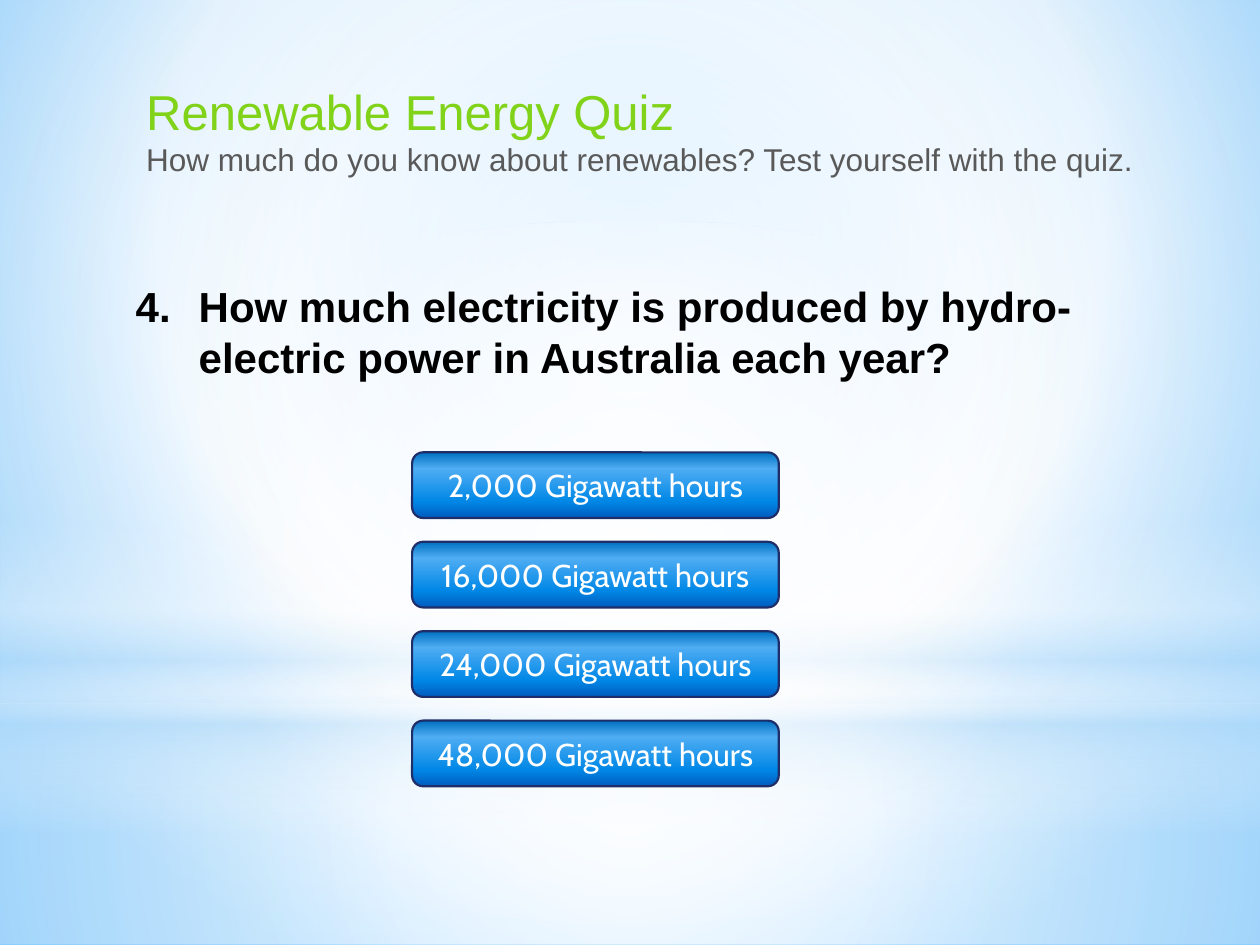
"""Build the hydro-electric question slide of the renewable energy quiz."""
import pptx
import pptx.dml.color
import pptx.enum.shapes
import pptx.enum.text
import pptx.oxml
import pptx.oxml.ns
import pptx.util

Pt = pptx.util.Pt
SHAPES = pptx.enum.shapes.MSO_SHAPE
ALIGN = pptx.enum.text.PP_ALIGN
ANCHOR = pptx.enum.text.MSO_ANCHOR
FIT = pptx.enum.text.MSO_AUTO_SIZE

THEME = {
    "title": {"name": "Arial", "size": Pt(28), "color": "81D31A"},
    "subtitle": {"name": "Arial", "size": Pt(18), "color": "595959"},
    "question": {"name": "Arial", "size": Pt(24), "color": "000000", "bold": True},
    "answer": {"name": "Cabin", "size": Pt(18), "color": "FFFFFF"},
    "outline": "1F2E69",
    "sky": [(0, "9ED5FF", 100), (60, "FFFFFF", 100), (100, "5BB9FF", 100)],
    "ground": [(0, "FFFFFF", 91), (37, "FFFFFF", 76), (100, "B4DCFA", 79)],
    "air": [(0, "FFFFFF", 89), (48, "FFFFFF", 62), (100, "B4DCFA", 79)],
    "horizon": [(0, "FFFFFF", 0), (29, "FFFFFF", 30), (45, "B4DCFA", 40),
                (55, "FFFFFF", 26), (65, "B4DCFA", 60), (100, "FFFFFF", 0)],
    "glow": [(0, "FFFFFF", 100), (56, "FFFFFF", 0)],
    "button": [(0, "0070C0", 100), (25, "4FADF3", 100),
               (75, "0087E6", 100), (100, "005CBF", 100)],
}


def apply_gradient(fill, element, stops, focus=None):
    """Fill with stops, radially towards focus or else from top to bottom."""
    fill.gradient()
    gradient = element.find(".//" + pptx.oxml.ns.qn("a:gradFill"))
    stop_xml = "".join(
        f'<a:gs pos="{position * 1000}"><a:srgbClr val="{color}">'
        f'<a:alpha val="{opacity * 1000}"/></a:srgbClr></a:gs>'
        for position, color, opacity in stops)
    direction = '<a:lin ang="5400000" scaled="0"/>'
    if focus:
        edges = " ".join(f'{side}="{value * 1000}"' for side, value in zip("ltrb", focus))
        direction = f'<a:path path="circle"><a:fillToRect {edges}/></a:path>'
    gradient.getparent().replace(gradient, pptx.oxml.parse_xml(
        f'<a:gradFill {pptx.oxml.ns.nsdecls("a")} rotWithShape="1">'
        f'<a:gsLst>{stop_xml}</a:gsLst>{direction}</a:gradFill>'))


def write(paragraph, text, style):
    """Add text to a paragraph in one of the theme's type styles."""
    run = paragraph.add_run()
    run.text = text
    for attribute, value in THEME[style].items():
        if attribute == "color":
            run.font.color.rgb = pptx.dml.color.RGBColor.from_string(value)
        else:
            setattr(run.font, attribute, value)


presentation = pptx.Presentation()
presentation.slide_width, presentation.slide_height = Pt(720), Pt(540)
slide = presentation.slides.add_slide(presentation.slide_layouts[6])
apply_gradient(slide.background.fill, slide.element, THEME["sky"], (20, 10, 20, 60))

center = (50, 50, 50, 50)
for kind, top, height, stops, focus in [
    (SHAPES.RECTANGLE, 402, 138, "ground", center),
    (SHAPES.RECTANGLE, 0, 402, "air", center),
    (SHAPES.RECTANGLE, 296.5, 180, "horizon", None),
    (SHAPES.OVAL, 126, 402, "glow", center),
]:
    shape = slide.shapes.add_shape(kind, 0, Pt(top), Pt(720), Pt(height))
    shape.shadow.inherit = False
    shape.line.fill.background()
    apply_gradient(shape.fill, shape.element, THEME[stops], focus)

question_box = slide.shapes.add_textbox(Pt(70.5), Pt(157), Pt(595.5), Pt(65.5))
heading_box = slide.shapes.add_textbox(Pt(76.5), Pt(43), Pt(607), Pt(63.5))
for box in (question_box, heading_box):
    for attribute, value in {"word_wrap": True, "auto_size": FIT.SHAPE_TO_FIT_TEXT}.items():
        setattr(box.text_frame, attribute, value)

question = question_box.text_frame.paragraphs[0]
write(question, "How much electricity is produced by hydro-electric power in Australia each year?",
      "question")
properties = question._p.get_or_add_pPr()
properties.set("marL", str(Pt(36)))
properties.set("indent", str(-Pt(36)))
properties.append(pptx.oxml.parse_xml(
    f'<a:buAutoNum {pptx.oxml.ns.nsdecls("a")} type="arabicPeriod" startAt="4"/>'))

write(heading_box.text_frame.paragraphs[0], "Renewable Energy Quiz", "title")
write(heading_box.text_frame.add_paragraph(),
      "How much do you know about renewables? Test yourself with the quiz.", "subtitle")

for index, amount in enumerate(["2,000", "16,000", "24,000", "48,000"]):
    button = slide.shapes.add_shape(
        SHAPES.ROUNDED_RECTANGLE, Pt(235.5), Pt(258.5 + index * 51.1), Pt(209.5), Pt(37.5))
    button.shadow.inherit = False
    apply_gradient(button.fill, button.element, THEME["button"])
    button.line.color.rgb = pptx.dml.color.RGBColor.from_string(THEME["outline"])
    button.line.width = Pt(1.25)
    button.text_frame.vertical_anchor = ANCHOR.MIDDLE
    paragraph = button.text_frame.paragraphs[0]
    paragraph.alignment = ALIGN.CENTER
    write(paragraph, f"{amount} Gigawatt hours", "answer")

presentation.save("out.pptx")
